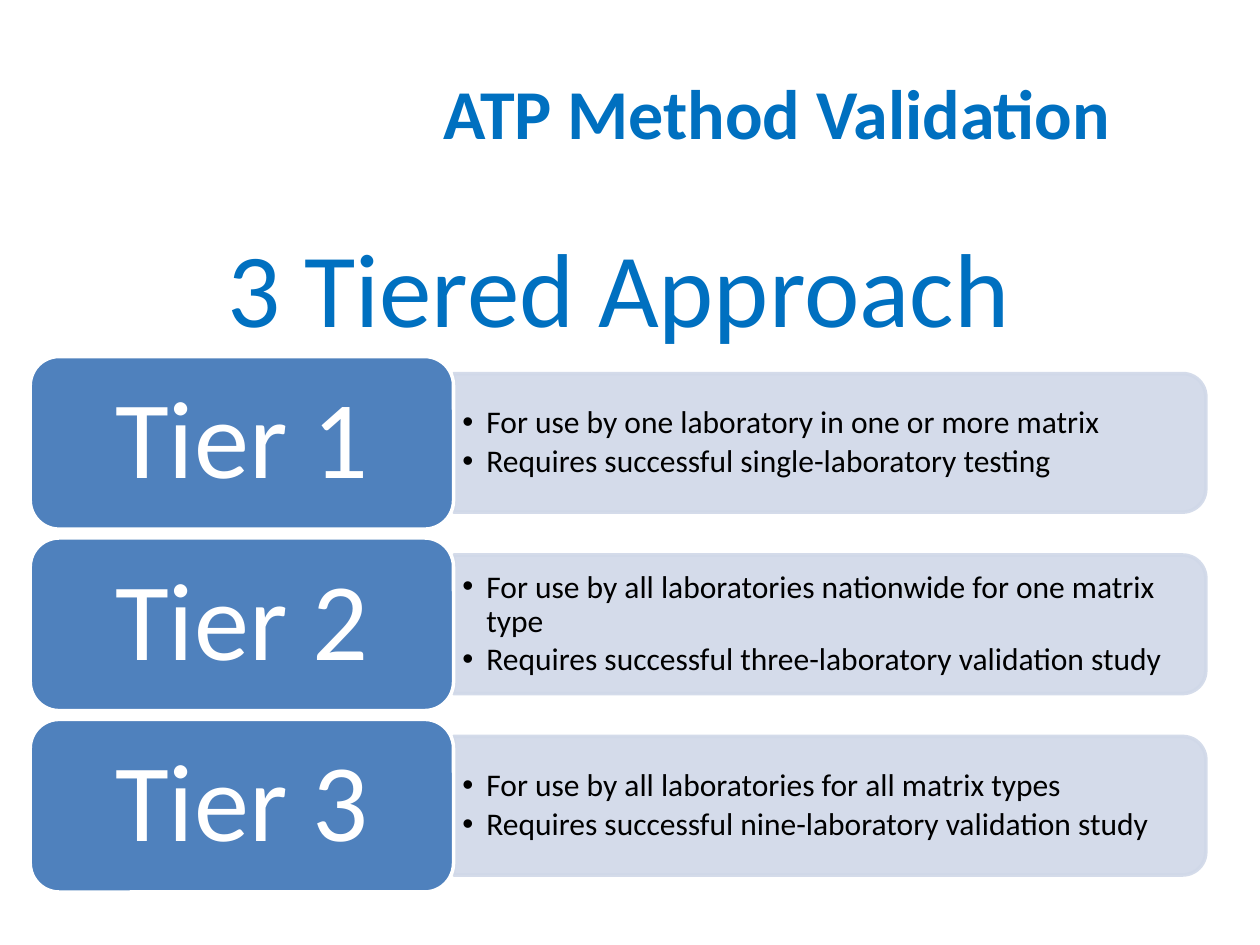
from lxml import etree
from pptx import Presentation
from pptx.dml.color import RGBColor
from pptx.enum.shapes import MSO_SHAPE
from pptx.enum.text import MSO_ANCHOR, PP_ALIGN
from pptx.oxml.ns import qn
from pptx.util import Inches, Pt

ROUNDED = MSO_SHAPE.ROUNDED_RECTANGLE
ROUNDED_TOP = MSO_SHAPE.ROUND_2_SAME_RECTANGLE
TOP, MIDDLE = MSO_ANCHOR.TOP, MSO_ANCHOR.MIDDLE
LEFT, CENTER = PP_ALIGN.LEFT, PP_ALIGN.CENTER

COLORS = {
    "heading": "0070C0",
    "tier": "4F81BD",
    "panel": "D0D8E8",
    "white": "FFFFFF",
    "black": "000000",
}

TIERS = [
    ("Tier 1", ["For use by one laboratory in one or more matrix",
                "Requires successful single-laboratory testing"]),
    ("Tier 2", ["For use by all laboratories nationwide for one matrix type",
                "Requires successful three-laboratory validation study"]),
    ("Tier 3", ["For use by all laboratories for all matrix types",
                "Requires successful nine-laboratory validation study"]),
]

# Tier rows
FIRST_TOP, ROW_STEP = 2.83, 1.44
TIER_LEFT, TIER_WIDTH, TIER_HEIGHT = 0.24, 3.36, 1.37
PANEL_LEFT = TIER_LEFT + TIER_WIDTH
PANEL_WIDTH, PANEL_HEIGHT = 5.97, 1.1
BULLETS_WIDTH, BULLETS_HEIGHT = 5.92, 0.99


class SlideBuilder:
    font = "Calibri"

    def __init__(self, page):
        self.page = page

    def color(self, name):
        return RGBColor.from_string(COLORS[name])

    def format_span(self, para, size, color, bold=False):
        for span in para.runs:
            span.font.name = self.font
            span.font.size = Pt(size)
            span.font.bold = bold
            span.font.color.rgb = self.color(color)

    def set_frame(self, frame, anchor, side, edge):
        frame.word_wrap = True
        frame.vertical_anchor = anchor
        frame.margin_left = frame.margin_right = Inches(side)
        frame.margin_top = frame.margin_bottom = Inches(edge)

    def text_box(self, left, top, width, height):
        return self.page.shapes.add_textbox(
            Inches(left), Inches(top), Inches(width), Inches(height))

    def heading(self, text, left, top, width, height, size, align, bold=False):
        frame = self.text_box(left, top, width, height).text_frame
        self.set_frame(frame, TOP, 0.1, 0.05)
        frame.text = text
        frame.paragraphs[0].alignment = align
        self.format_span(frame.paragraphs[0], size, "heading", bold)

    def shape(self, kind, left, top, width, height, fill, line):
        shape = self.page.shapes.add_shape(
            kind, Inches(left), Inches(top), Inches(width), Inches(height))
        shape.shadow.inherit = False
        shape.fill.solid()
        shape.fill.fore_color.rgb = self.color(fill)
        shape.line.color.rgb = self.color(line)
        shape.line.width = Pt(2)
        return shape

    def panel(self, center_y):
        # Turned a quarter so that the rounded end faces right
        center_x = PANEL_LEFT + PANEL_WIDTH / 2
        panel = self.shape(ROUNDED_TOP, center_x - PANEL_HEIGHT / 2,
                           center_y - PANEL_WIDTH / 2, PANEL_HEIGHT,
                           PANEL_WIDTH, "panel", "panel")
        panel.rotation = 90
        for tint in panel.element.spPr.iter(qn("a:srgbClr")):
            etree.SubElement(tint, qn("a:alpha"), val="90000")

    def bullets(self, lines, center_y):
        box = self.text_box(PANEL_LEFT, center_y - BULLETS_HEIGHT / 2,
                            BULLETS_WIDTH, BULLETS_HEIGHT)
        frame = box.text_frame
        self.set_frame(frame, MIDDLE, 0.07, 0.04)
        frame.text = "\n".join(lines)
        for para in frame.paragraphs:
            para.level = 1
            para.line_spacing = 0.9
            para.space_after = Pt(2.7)
            properties = para._p.get_or_add_pPr()
            properties.set("marL", str(Inches(0.19)))
            properties.set("indent", str(Inches(-0.19)))
            etree.SubElement(properties, qn("a:buFont"), typeface="Arial")
            etree.SubElement(properties, qn("a:buChar"), char="•")
            self.format_span(para, 18, "black")

    def tier(self, name, top):
        block = self.shape(ROUNDED, TIER_LEFT, top, TIER_WIDTH, TIER_HEIGHT,
                           "tier", "white")
        frame = block.text_frame
        self.set_frame(frame, MIDDLE, 0.33, 0.2)
        frame.text = name
        para = frame.paragraphs[0]
        para.alignment = CENTER
        para.line_spacing = 0.9
        self.format_span(para, 63, "white")


def main():
    deck = Presentation()
    deck.slide_width, deck.slide_height = Inches(10), Inches(7.5)
    builder = SlideBuilder(deck.slides.add_slide(deck.slide_layouts[6]))

    # Title
    builder.heading("ATP Method Validation", 3.42, 0.5, 6.33, 0.75, 40, LEFT,
                    bold=True)

    # One row for each tier
    for row, (name, lines) in enumerate(TIERS):
        top = FIRST_TOP + row * ROW_STEP
        center_y = top + TIER_HEIGHT / 2
        builder.panel(center_y)
        builder.bullets(lines, center_y)
        builder.tier(name, top)

    # Subtitle
    builder.heading("3 Tiered Approach", 0.7, 1.72, 8.42, 1.11, 60, CENTER)

    deck.save("out.pptx")


if __name__ == "__main__":
    main()
